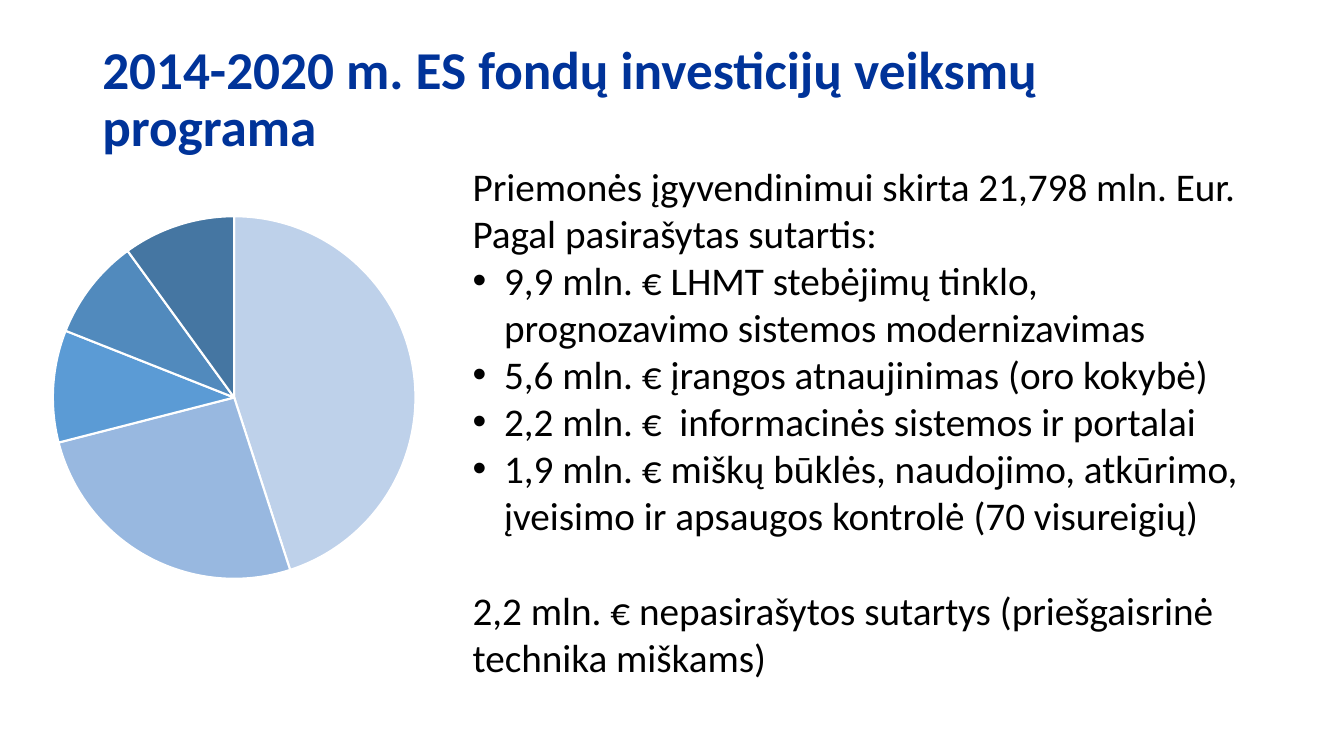
from lxml import etree
from pptx import Presentation
from pptx.chart import data
from pptx.dml import color
from pptx.enum import chart as charts, text
from pptx.oxml import ns
from pptx.util import Pt

TITLE = "2014-2020 m. ES fondų investicijų veiksmų programa"
INTRO = "Priemonės įgyvendinimui skirta 21,798 mln. Eur. Pagal pasirašytas sutartis:"
CONTRACTS = [
    "9,9 mln. € LHMT stebėjimų tinklo, prognozavimo sistemos modernizavimas",
    "5,6 mln. € įrangos atnaujinimas (oro kokybė)",
    "2,2 mln. €  informacinės sistemos ir portalai",
    "1,9 mln. € miškų būklės, naudojimo, atkūrimo, įveisimo ir apsaugos kontrolė (70 visureigių)",
]
UNSIGNED = "2,2 mln. € nepasirašytos sutartys (priešgaisrinė technika miškams)"
SHARES = [
    ("1", 45, "BED1EA"),
    ("2", 26, "98B8E0"),
    ("3", 10, "5B9BD5"),
    ("4", 9, "518ABD"),
    ("5", 10, "4576A2"),
]
COLORS = {"title": "003399", "body": "000000", "edge": "FFFFFF"}
FONT = "Calibri"
BODY_SIZE = 28
LINE_GAP = 34
INDENT = 22.5
PIE_FRAME = (15.8, 144, 303, 280)
PIE_DIAMETER = 259


def rgb(value):
    return color.RGBColor.from_string(value)


def add_box(slide, frame, anchor):
    box = slide.shapes.add_textbox(*map(Pt, frame)).text_frame
    box.word_wrap = True
    box.vertical_anchor = anchor
    return box


def write(paragraph, words, size, tone, bold=False):
    run = paragraph.add_run()
    run.text = words
    run.font.name = FONT
    run.font.size = Pt(size)
    run.font.bold = bold
    run.font.color.rgb = rgb(tone)


def add_bullet(paragraph):
    props = paragraph._p.get_or_add_pPr()
    props.set("marL", str(Pt(INDENT)))
    props.set("indent", str(-Pt(INDENT)))
    etree.SubElement(props, ns.qn("a:buFont")).set("typeface", "Arial")
    etree.SubElement(props, ns.qn("a:buChar")).set("char", "•")


def add_pie(slide):
    shares = data.CategoryChartData()
    shares.categories = [name for name, _, _ in SHARES]
    shares.add_series("Series 1", [value for _, value, _ in SHARES])
    pie = slide.shapes.add_chart(
        charts.XL_CHART_TYPE.PIE, *map(Pt, PIE_FRAME), shares).chart
    pie.has_legend = False
    pie.has_title = False
    pie.font.name = FONT
    pie.font.size = Pt(10)
    pie.font.color.rgb = rgb(COLORS["body"])
    pie.plots[0].vary_by_categories = True
    for index, (_, _, tone) in enumerate(SHARES):
        slice_format = pie.plots[0].series[0].points[index].format
        slice_format.fill.solid()
        slice_format.fill.fore_color.rgb = rgb(tone)
        slice_format.line.color.rgb = rgb(COLORS["edge"])
        slice_format.line.width = Pt(1.5)

    area = pie._chartSpace.chart.plotArea
    for old in area.findall(ns.qn("c:layout")):
        area.remove(old)
    layout = etree.Element(ns.qn("c:layout"))
    area.insert(0, layout)
    manual = etree.SubElement(layout, ns.qn("c:manualLayout"))
    width, height = (PIE_DIAMETER / side for side in PIE_FRAME[2:])
    settings = [
        ("layoutTarget", "inner"), ("xMode", "edge"), ("yMode", "edge"),
        ("x", (1 - width) / 2), ("y", (1 - height) / 2),
        ("w", width), ("h", height),
    ]
    for tag, value in settings:
        etree.SubElement(manual, ns.qn("c:" + tag)).set("val", str(value))


def main():
    deck = Presentation()
    deck.slide_width, deck.slide_height = Pt(960), Pt(540)
    slide = deck.slides.add_slide(deck.slide_layouts[6])

    title = add_box(slide, (66, 19.5, 828, 105), text.MSO_ANCHOR.MIDDLE).paragraphs[0]
    title.line_spacing = 0.9
    write(title, TITLE, 38, COLORS["title"], True)

    body = add_box(slide, (330.5, 112.3, 574.6, 409.7), text.MSO_ANCHOR.TOP)
    for index, words in enumerate([INTRO, *CONTRACTS, UNSIGNED]):
        paragraph = body.add_paragraph() if index else body.paragraphs[0]
        if words in CONTRACTS:
            add_bullet(paragraph)
        if words == UNSIGNED:
            paragraph.space_before = Pt(LINE_GAP)
        write(paragraph, words, BODY_SIZE, COLORS["body"])

    add_pie(slide)
    deck.save("out.pptx")


if __name__ == "__main__":
    main()
